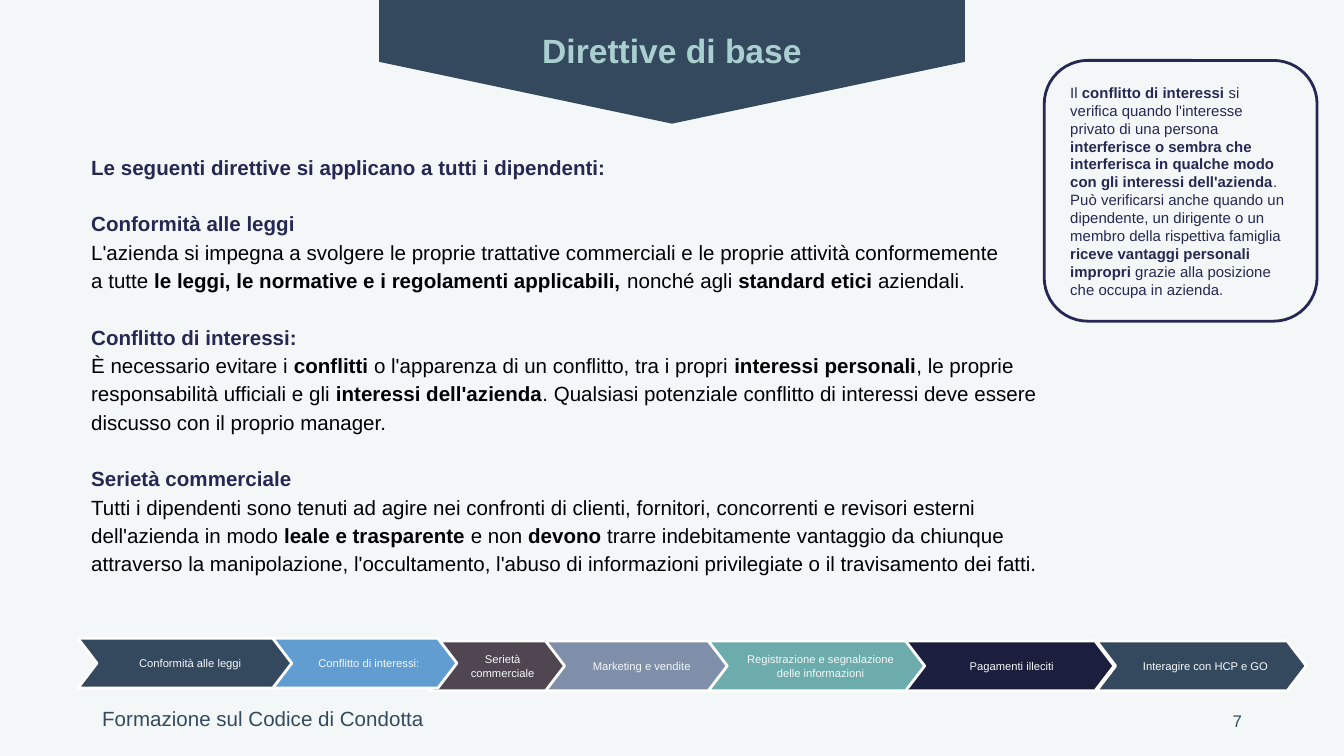
from pptx import Presentation
from pptx.dml.color import RGBColor
from pptx.enum.shapes import MSO_SHAPE
from pptx.enum.text import MSO_ANCHOR, PP_ALIGN
from pptx.util import Inches, Pt

PENTAGON, CHEVRON = MSO_SHAPE.PENTAGON, MSO_SHAPE.CHEVRON
ROUNDED = MSO_SHAPE.ROUNDED_RECTANGLE
TOP, MIDDLE = MSO_ANCHOR.TOP, MSO_ANCHOR.MIDDLE
LEFT, CENTER, RIGHT = PP_ALIGN.LEFT, PP_ALIGN.CENTER, PP_ALIGN.RIGHT

COLORS = {
    "background": "F4F7F7", "slate": "34495E", "mint": "AACFD0",
    "navy": "242852", "black": "000000", "white": "FFFFFF",
    "plum": "4F4651", "midnight": "1B1E3D", "steel": "7F8FA9",
    "teal": "6DACAC", "blue": "629DD1",
}
SMALL_INSETS = (0.07, 0.04, 0.07, 0.04)
WIDE_INSETS = (0.1, 0.1, 0.1, 0.1)
CHEVRON_INSETS = (0.06, 0, 0, 0)

INTRO = "Le seguenti direttive si applicano a tutti i dipendenti:"
SECTIONS = [
    ("Conformità alle leggi",
     "L'azienda si impegna a svolgere le proprie trattative commerciali e le proprie "
     "attività conformemente \na tutte **le leggi, le normative e i regolamenti "
     "applicabili, **nonché agli **standard etici **aziendali."),
    ("Conflitto di interessi:",
     "È necessario evitare i **conflitti** o l'apparenza di un conflitto, tra i propri "
     "**interessi personali**, le proprie responsabilità ufficiali e gli **interessi "
     "dell'azienda**. Qualsiasi potenziale conflitto di interessi deve essere discusso "
     "con il proprio manager."),
    ("Serietà commerciale",
     "Tutti i dipendenti sono tenuti ad agire nei confronti di clienti, fornitori, "
     "concorrenti e revisori esterni dell'azienda in modo **leale e trasparente **e non "
     "**devono **trarre indebitamente vantaggio da chiunque attraverso la manipolazione, "
     "l'occultamento, l'abuso di informazioni privilegiate o il travisamento dei fatti."),
]
DEFINITION = (
    "Il **conflitto di interessi **si verifica quando l'interesse privato di una persona "
    "**interferisce o sembra che interferisca in qualche modo con gli interessi "
    "dell'azienda**. Può verificarsi anche quando un dipendente, un dirigente o un membro "
    "della rispettiva famiglia **riceve vantaggi personali impropri** grazie alla "
    "posizione che occupa in azienda."
)
# Back to front: label, colour, left, top and width within the band
STEPS = [
    ("Serietà commerciale", "plum", 2.62, 0.02, 1.02),
    ("Pagamenti illeciti ", "midnight", 6.15, 0.02, 1.56),
    ("Marketing e vendite", "steel", 3.48, 0.02, 1.37),
    ("Registrazione e segnalazione delle informazioni", "teal", 4.69, 0.02, 1.61),
    ("Conformità alle leggi", "slate", 0, 0, 1.61),
    ("Conflitto di interessi:", "blue", 1.45, 0, 1.37),
    ("Interagire con HCP e GO", "slate", 7.58, 0.02, 1.56),
]


def rgb(name):
    return RGBColor.from_string(COLORS[name])


def prepare_frame(shape, insets, anchor=TOP):
    frame = shape.text_frame
    frame.word_wrap = True
    frame.vertical_anchor = anchor
    (frame.margin_left, frame.margin_top,
     frame.margin_right, frame.margin_bottom) = map(Inches, insets)
    return frame


def write(para, text, size, color, bold=False, align=LEFT):
    """Write text in which ** switches bold on and off and a newline breaks the line."""
    para.alignment = align
    para.font.name = "Arial"
    para.font.size = Pt(size)
    para.font.color.rgb = rgb(color)
    para.font.bold = bold
    for index, part in enumerate(text.split("**")):
        for number, line in enumerate(part.split("\n")):
            if number:
                para.add_line_break()
            span = para.add_run()
            span.text = line
            if index % 2:
                span.font.bold = True


def add_shape(page, kind, box, adjustment, fill=None, line=None):
    shape = page.shapes.add_shape(kind, *map(Inches, box))
    shape.shadow.inherit = False
    shape.adjustments[0] = adjustment
    if fill:
        shape.fill.solid()
        shape.fill.fore_color.rgb = rgb(fill)
    else:
        shape.fill.background()
    if line:
        shape.line.color.rgb = rgb(line)
        shape.line.width = Pt(1.5)
    else:
        shape.line.fill.background()
    return shape


def add_label(page, box, text, size, color, anchor=TOP, **style):
    label = page.shapes.add_textbox(*map(Inches, box))
    frame = prepare_frame(label, SMALL_INSETS, anchor)
    write(frame.paragraphs[0], text, size, color, **style)


def add_banner(page, box):
    """Draw the downward-pointing title banner, a pentagon turned by 90 degrees."""
    left, top, width, height = box
    turned = (left + (width - height) / 2, top + (height - width) / 2, height, width)
    add_shape(page, PENTAGON, turned, 0.5, fill="slate").rotation = 90
    add_label(page, (left - 0.59, top + 0.18, width + 1.18, 0.38),
              "Direttive di base", 18, "mint", bold=True, align=CENTER)


def add_guidelines(page, box):
    body = page.shapes.add_textbox(*map(Inches, box))
    frame = prepare_frame(body, WIDE_INSETS)
    intro = frame.paragraphs[0]
    intro.line_spacing = 0.9
    write(intro, INTRO, 11, "navy", bold=True)
    for title, text in SECTIONS:
        heading = frame.add_paragraph()
        heading.space_before = Pt(15.2)
        write(heading, title, 11, "navy", bold=True)
        para = frame.add_paragraph()
        write(para, text, 11, "black")
        heading.line_spacing = para.line_spacing = 1.15


def add_definition(page, box):
    callout = add_shape(page, ROUNDED, box, 0.167, line="navy")
    frame = prepare_frame(callout, WIDE_INSETS, MIDDLE)
    write(frame.paragraphs[0], DEFINITION, 8, "navy")


def add_steps(page, box):
    left, top, _, height = box
    for text, color, offset, drop, width in STEPS:
        place = (left + offset, top + drop, width, height - 0.02)
        step = add_shape(page, CHEVRON, place, 0.382, fill=color, line="white")
        frame = prepare_frame(step, CHEVRON_INSETS, MIDDLE)
        write(frame.paragraphs[0], text, 6, "background", align=CENTER)


def add_footer(page, box):
    left, top, width, height = box
    add_label(page, (left, top, 3.25, height),
              "Formazione sul Codice di Condotta", 11, "slate")
    add_label(page, (left + width - 2.25, top, 2.25, height),
              "7", 9, "slate", MIDDLE, align=RIGHT)


def main():
    deck = Presentation()
    deck.slide_width = Inches(10)
    deck.slide_height = deck.slide_width * 9 // 16
    page = deck.slides.add_slide(deck.slide_layouts[6])
    page.background.fill.solid()
    page.background.fill.fore_color.rgb = rgb("background")
    add_banner(page, (2.82, 0, 4.36, 0.92))
    add_guidelines(page, (0.58, 1.07, 7.48, 3.52))
    add_definition(page, (7.77, 0.45, 2.03, 1.94))
    add_steps(page, (0.58, 4.75, 9.14, 0.39))
    add_footer(page, (0.69, 5.21, 8.62, 0.3))
    deck.save("out.pptx")


if __name__ == "__main__":
    main()
